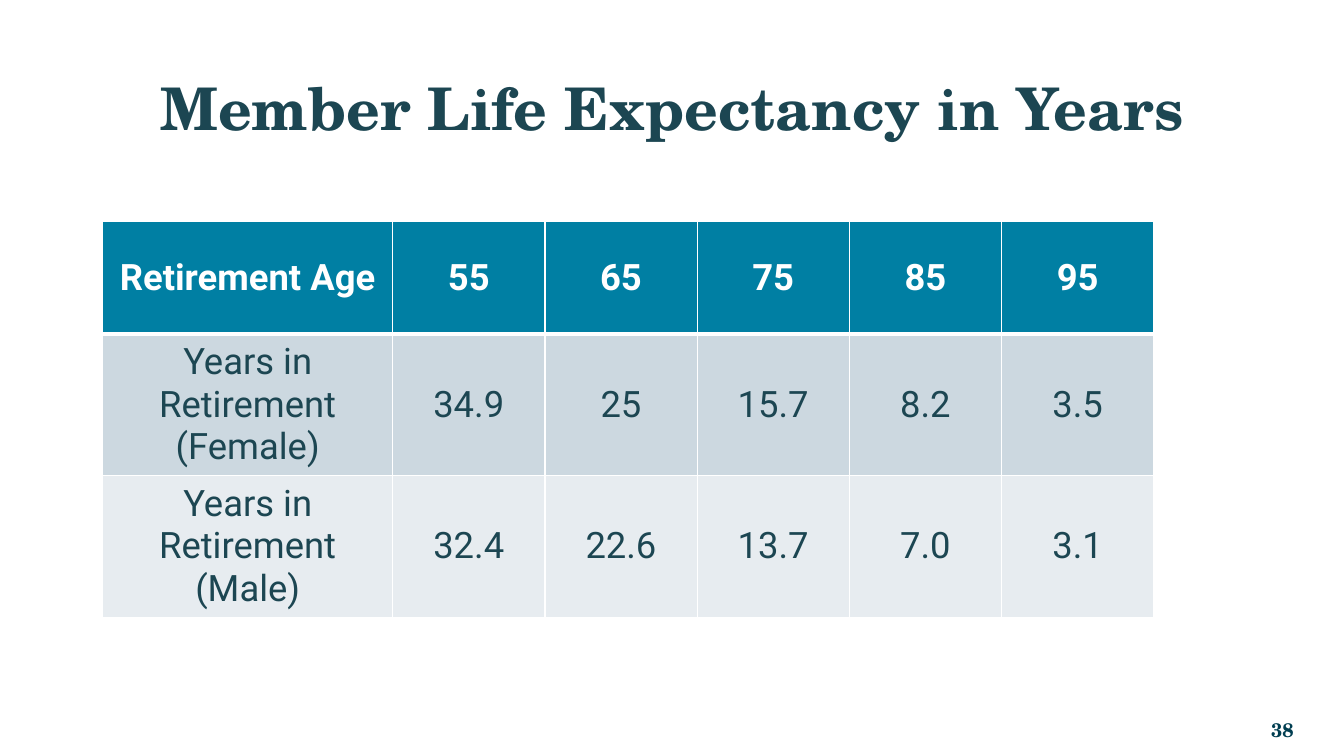
"""Build the member life expectancy slide."""
from lxml import etree
from pptx import Presentation
from pptx.dml.color import RGBColor
from pptx.enum import text
from pptx.oxml import ns
from pptx.util import Emu, Pt

TITLE = "Member Life Expectancy in Years"
PAGE = "38"
ROWS = [
    ["Retirement Age", "55", "65", "75", "85", "95"],
    ["Years in Retirement\n(Female)", "34.9", "25", "15.7", "8.2", "3.5"],
    ["Years in Retirement\n(Male)", "32.4", "22.6", "13.7", "7.0", "3.1"],
]
COLORS = {"ink": "1C4652", "page": "003E51", "white": "FFFFFF"}
ROW_FILLS = ["007FA3", "CCD8E0", "E7ECF0"]
SERIF, SANS = "TeX Gyre Schola", "Roboto"
COL_WIDTHS = [276] + [145] * 5
ROW_HEIGHTS = [107, 135, 135]


def px(n):
    return Emu(n * 9525)


def write(tf, content, size, font, color, bold, align):
    for i, line in enumerate(content.split("\n")):
        p = tf.paragraphs[0] if i == 0 else tf.add_paragraph()
        p.alignment = align
        r = p.add_run()
        r.text = line
        r.font.size, r.font.name, r.font.bold = Pt(size), font, bold
        r.font.color.rgb = RGBColor.from_string(color)


def set_frame(tf, anchor):
    tf.word_wrap = True
    tf.auto_size = text.MSO_AUTO_SIZE.NONE
    tf.vertical_anchor = anchor
    tf.margin_left = tf.margin_right = tf.margin_top = tf.margin_bottom = 0


def add_border(cell, side, width):
    ln = etree.SubElement(cell._tc.get_or_add_tcPr(), ns.qn(f"a:ln{side}"), w=str(Pt(width)))
    fill = etree.SubElement(ln, ns.qn("a:solidFill"))
    etree.SubElement(fill, ns.qn("a:srgbClr"), val=COLORS["white"])


def add_title(s):
    sp = s.shapes.title
    sp.left, sp.top, sp.width, sp.height = map(px, (48, 48, 1184, 88))
    set_frame(sp.text_frame, text.MSO_ANCHOR.BOTTOM)
    write(sp.text_frame, TITLE, 42, SERIF, COLORS["ink"], True, text.PP_ALIGN.CENTER)
    sp.text_frame.paragraphs[0].line_spacing = 0.9


def add_page_number(s):
    sp = s.shapes.add_textbox(*map(px, (1125, 681, 107, 27)))
    set_frame(sp.text_frame, text.MSO_ANCHOR.MIDDLE)
    write(sp.text_frame, PAGE, 14, SERIF, COLORS["page"], True, text.PP_ALIGN.RIGHT)


def add_life_table(s):
    size = (98, 211, sum(COL_WIDTHS), sum(ROW_HEIGHTS))
    table = s.shapes.add_table(len(ROWS), len(COL_WIDTHS), *map(px, size)).table
    for col, width in zip(table.columns, COL_WIDTHS):
        col.width = px(width)
    for i, (row, height) in enumerate(zip(table.rows, ROW_HEIGHTS)):
        row.height = px(height)
        header = i == 0
        for cell, content in zip(row.cells, ROWS[i]):
            cell.margin_left = cell.margin_right = px(7)
            cell.margin_top = cell.margin_bottom = px(4)
            cell.vertical_anchor = text.MSO_ANCHOR.MIDDLE
            for side in "LRTB":
                thick = (i, side) in ((0, "B"), (1, "T"))
                add_border(cell, side, 3 if thick else 1)
            cell.fill.solid()
            cell.fill.fore_color.rgb = RGBColor.from_string(ROW_FILLS[i])
            color = COLORS["white" if header else "ink"]
            write(cell.text_frame, content, 26, SANS, color, header, text.PP_ALIGN.CENTER)


def main():
    prs = Presentation()
    prs.slide_width, prs.slide_height = px(1280), px(720)
    s = prs.slides.add_slide(prs.slide_layouts[5])
    add_title(s)
    add_page_number(s)
    add_life_table(s)
    prs.save("out.pptx")


if __name__ == "__main__":
    main()
